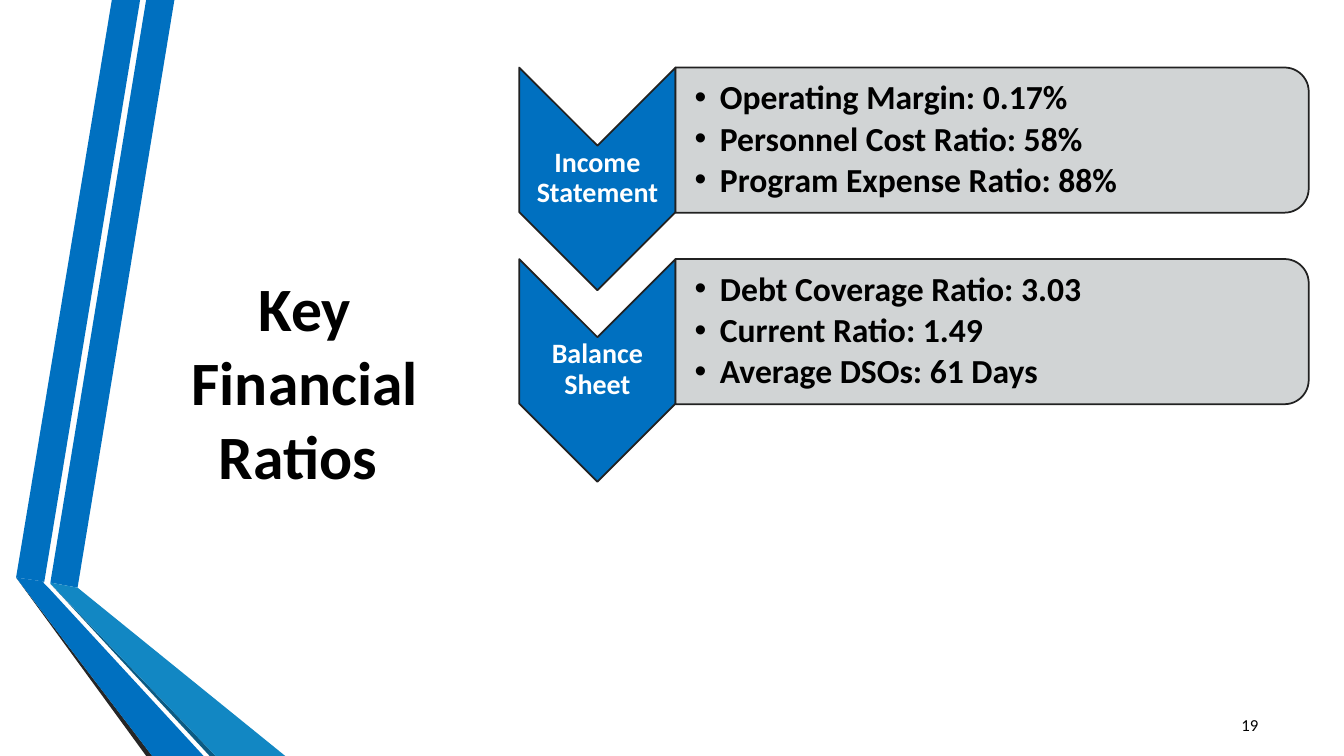
from lxml import etree
from pptx import Presentation
from pptx import util as u
from pptx.dml.color import RGBColor
from pptx.enum import shapes, text
from pptx.oxml.ns import qn

COLORS = {"blue": "0070C0", "sky": "1287C3", "navy": "0C5A82", "dark": "262626",
          "outline": "212121", "panel": "CDD0D1", "black": "000000", "white": "FFFFFF"}
WIDTH, HEIGHT = 13.33, 7.5
RIBBONS = [
    ("blue", [(0.5, 5.78), (0.77, 5.83), (1.73, 0), (1.45, 0)]),
    ("blue", [(1.39, 0), (1.11, 0), (0.16, 5.73), (0.44, 5.77)]),
    ("dark", [(0.16, 5.73), (1.45, HEIGHT), (1.51, HEIGHT)]),
    ("navy", [(0.5, 5.79), (2.08, HEIGHT), (2.14, HEIGHT)]),
    ("sky", [(0.5, 5.79), (2.14, HEIGHT), (2.83, HEIGHT), (0.77, 5.83), (0.5, 5.78)]),
    ("blue", [(2.02, HEIGHT), (0.48, 5.83), (0.43, 5.78), (0.44, 5.77), (0.16, 5.73), (1.51, HEIGHT)]),
]
STATEMENTS = [
    ("Income Statement", ["Operating Margin: 0.17%", "Personnel Cost Ratio: 58%",
                          "Program Expense Ratio: 88%"]),
    ("Balance Sheet", ["Debt Coverage Ratio: 3.03", "Current Ratio: 1.49",
                       "Average DSOs: 61 Days"]),
]
PITCH = 1.9


def inches(*lengths):
    """Convert lengths to slide units."""
    return [u.Inches(length) for length in lengths]


def paint(part, fill, line=None):
    """Give a shape its fill and outline and take its shadow away."""
    part.shadow.inherit = False
    part.fill.solid()
    part.fill.fore_color.rgb = RGBColor.from_string(COLORS[fill])
    if line:
        part.line.color.rgb = RGBColor.from_string(COLORS[line])
        part.line.width = u.Pt(1.25)
    else:
        part.line.fill.background()


def write(frame, lines, insets, size, color="black", bold=True, **paragraph_format):
    """Fill a text frame with one paragraph per line."""
    frame.word_wrap = True
    frame.auto_size = text.MSO_AUTO_SIZE.NONE
    frame.vertical_anchor = text.MSO_ANCHOR.MIDDLE
    for side, inset in zip(("left", "top", "right", "bottom"), insets):
        setattr(frame, f"margin_{side}", u.Inches(inset))
    for index, line in enumerate(lines):
        paragraph = frame.add_paragraph() if index else frame.paragraphs[0]
        run = paragraph.add_run()
        run.text = line
        for key, value in paragraph_format.items():
            setattr(paragraph, key, value)
        for key, value in {"name": "Calibri", "size": u.Pt(size), "bold": bold}.items():
            setattr(run.font, key, value)
        run.font.color.rgb = RGBColor.from_string(COLORS[color])


def add_turned(slide, preset, left, top, width, height):
    """Add a preset turned by 90 degrees that covers the given box."""
    x = left + (width - height) / 2
    y = top + (height - width) / 2
    turned = slide.shapes.add_shape(preset, *inches(x, y, height, width))
    turned.rotation = 90
    return turned


def draw_ribbons(slide):
    """Draw the folded ribbons along the left edge."""
    for color, points in RIBBONS:
        corners = [tuple(inches(*point)) for point in points]
        outline = slide.shapes.build_freeform(*corners[0])
        outline.add_line_segments(corners[1:], close=True)
        paint(outline.convert_to_shape(), color)


def place_title(slide, left, top, width, height):
    """Place the slide title in its box."""
    title = slide.shapes.title
    title.left, title.top, title.width, title.height = inches(left, top, width, height)
    write(title.text_frame, ["Key Financial Ratios "], (0.1, 0.05, 0.1, 0.05), 44,
          alignment=text.PP_ALIGN.CENTER)


def draw_statement(slide, left, top, heading, ratios):
    """Draw one chevron with its heading and the panel of ratios beside it."""
    arrow_width, arrow_height, panel_width, panel_height = 1.55, 2.21, 6.28, 1.44
    arrow = add_turned(slide, shapes.MSO_SHAPE.CHEVRON, left, top, arrow_width, arrow_height)
    paint(arrow, "blue", "outline")
    label = slide.shapes.add_textbox(*inches(left, top + 0.77, arrow_width, 0.66))
    write(label.text_frame, [heading], [0.01] * 4, 20, "white",
          alignment=text.PP_ALIGN.CENTER, line_spacing=0.9, space_after=u.Pt(7))

    panel_left = left + arrow_width
    panel = add_turned(slide, shapes.MSO_SHAPE.ROUND_2_SAME_RECTANGLE,
                       panel_left, top, panel_width, panel_height)
    paint(panel, "panel", "outline")
    tint = panel.fill._xPr.find(qn("a:solidFill"))[0]
    etree.SubElement(tint, qn("a:alpha"), val="90000")
    details = slide.shapes.add_textbox(*inches(panel_left, top + 0.07, 6.21, 1.3))
    write(details.text_frame, ratios, (0.19, 0.02, 0.02, 0.02), 24,
          level=1, line_spacing=0.9, space_after=u.Pt(3.6))
    for paragraph in details.text_frame.paragraphs:
        properties = paragraph._p.get_or_add_pPr()
        properties.set("marL", str(u.Inches(0.25)))
        properties.set("indent", str(-u.Inches(0.25)))
        etree.SubElement(properties, qn("a:buFont"), typeface="Arial")
        etree.SubElement(properties, qn("a:buChar"), char="•")


def place_number(slide, left, top, width, height):
    """Place the page number in the lower right corner."""
    number = slide.shapes.add_textbox(*inches(left, top, width, height))
    write(number.text_frame, ["19"], (0.1, 0.05, 0.1, 0.05), 12, bold=False,
          alignment=text.PP_ALIGN.RIGHT, space_after=u.Pt(6))


def main():
    """Build the slide and save it."""
    deck = Presentation()
    deck.slide_width, deck.slide_height = inches(WIDTH, HEIGHT)
    slide = deck.slides.add_slide(deck.slide_layouts[5])
    draw_ribbons(slide)
    place_title(slide, 1.62, 0.75, 2.81, 6.06)
    for row, (heading, ratios) in enumerate(STATEMENTS):
        draw_statement(slide, 5.15, 0.67 + row * PITCH, heading, ratios)
    place_number(slide, 11.98, 6.99, 0.6, 0.4)
    deck.save("out.pptx")


if __name__ == "__main__":
    main()
